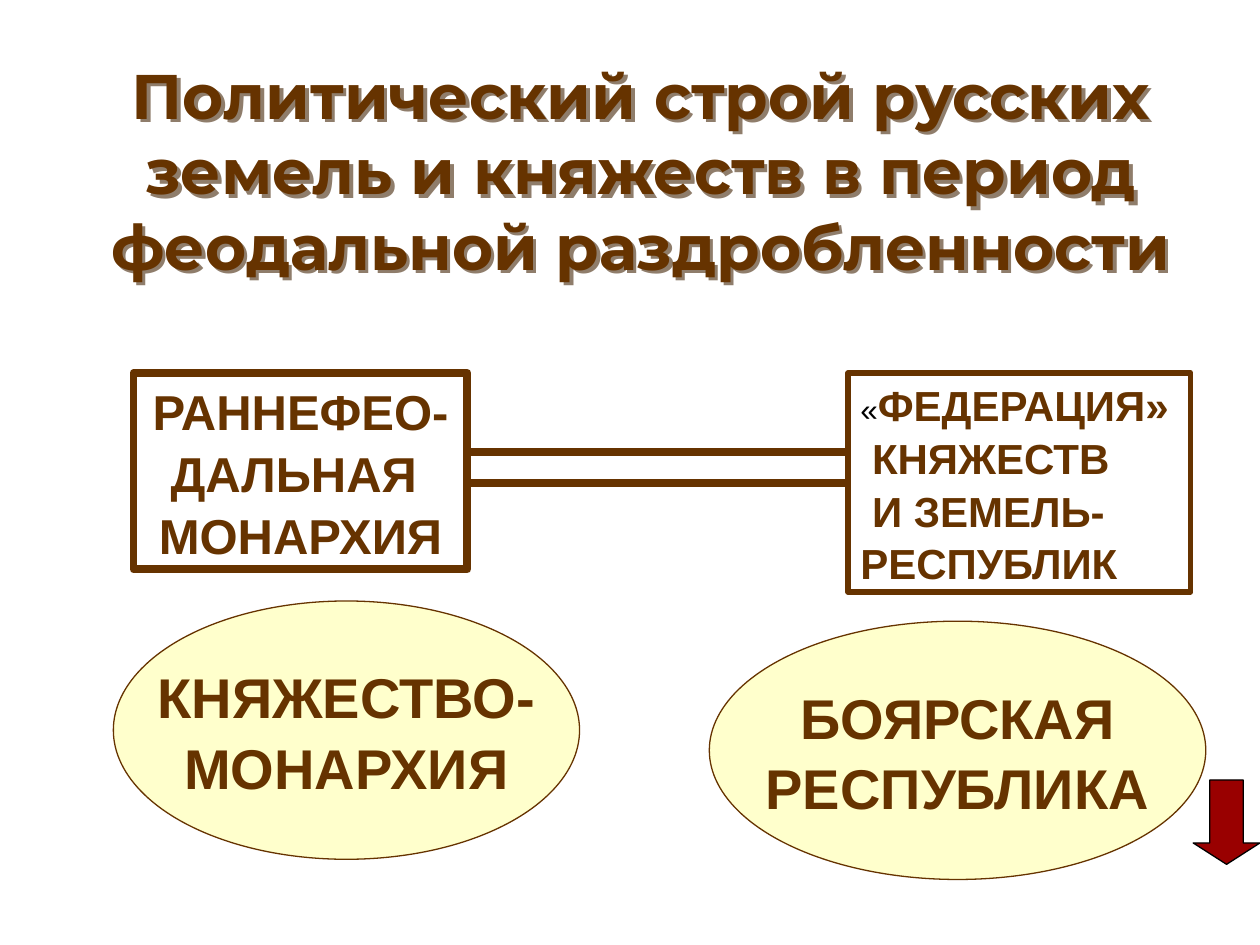
from lxml.etree import SubElement
from pptx import Presentation
from pptx.dml.color import RGBColor
from pptx.enum.shapes import MSO_CONNECTOR, MSO_SHAPE
from pptx.enum.text import MSO_ANCHOR, MSO_AUTO_SIZE, PP_ALIGN
from pptx.oxml.ns import qn
from pptx.util import Inches, Pt

BROWN, CREAM, RED, BLACK = "663300", "FFFFCC", "990000", "000000"
TITLE_SHADOW = "8F7D6B"


def color(value):
    """Turn a hex string into a colour."""
    return RGBColor.from_string(value)


def place(shape, box):
    """Move a shape to a box of left, top, width and height in inches."""
    shape.left, shape.top, shape.width, shape.height = map(Inches, box)


def add_span(para, text, size, font="Arial", fill=BROWN, bold=True):
    """Add one formatted run to a paragraph."""
    span = para.add_run()
    span.text = text
    span.font.name, span.font.size, span.font.bold = font, Pt(size), bold
    span.font.color.rgb = color(fill)


def add_title(page, box, text):
    """Place the title with its soft text shadow."""
    title = page.shapes.title
    place(title, box)
    frame = title.text_frame
    frame.word_wrap = True
    frame.auto_size = MSO_AUTO_SIZE.NONE
    frame.vertical_anchor = MSO_ANCHOR.MIDDLE
    para = frame.paragraphs[0]
    para.alignment = PP_ALIGN.CENTER
    add_span(para, text, 36, "Montserrat")
    effects = SubElement(title._element.spPr, qn("a:effectLst"))
    shadow = SubElement(effects, qn("a:outerShdw"), dist=str(Inches(0.04)),
                        dir="2700000", algn="ctr", rotWithShape="0")
    SubElement(shadow, qn("a:srgbClr"), val=TITLE_SHADOW)


def add_figure(page, kind, box, line_width, fill=None, line=BROWN):
    """Add a preset shape with its fill and outline."""
    shape = page.shapes.add_shape(kind, *map(Inches, box))
    shape.shadow.inherit = False
    if fill:
        shape.fill.solid()
        shape.fill.fore_color.rgb = color(fill)
    else:
        shape.fill.background()
    shape.line.color.rgb = color(line)
    shape.line.width = Pt(line_width)
    return shape


def write_lines(shape, lines, size, align=PP_ALIGN.CENTER, wrap=True):
    """Write each line as a paragraph, turning line feeds into breaks."""
    frame = shape.text_frame
    frame.word_wrap = wrap
    frame.vertical_anchor = MSO_ANCHOR.MIDDLE
    for index, line in enumerate(lines):
        para = frame.add_paragraph() if index else frame.paragraphs[0]
        para.alignment = align
        para.line_spacing = 1.05
        for part, text in enumerate(line.split("\n")):
            if part:
                para.add_line_break()
            if text.startswith("«"):
                add_span(para, "«", 18, fill=BLACK, bold=False)
                text = text[1:]
            add_span(para, text, size)


def add_link(page, left, right, top):
    """Draw a thick horizontal line between the two boxes."""
    link = page.shapes.add_connector(
        MSO_CONNECTOR.STRAIGHT, Inches(left), Inches(top), Inches(right), Inches(top))
    link.line.color.rgb = color(BROWN)
    link.line.width = Pt(4.5)
    SubElement(link._element.spPr, qn("a:effectLst"))


def add_state_forms(page):
    """Place the two linked boxes for the forms of state."""
    monarchy = add_figure(page, MSO_SHAPE.RECTANGLE, (1.06, 2.96, 2.65, 1.56), 4.5)
    write_lines(monarchy, ["РАННЕФЕО-", "ДАЛЬНАЯ \nМОНАРХИЯ"], 28)
    federation = add_figure(page, MSO_SHAPE.RECTANGLE, (6.73, 2.96, 2.72, 1.74), 3)
    write_lines(federation, ["«ФЕДЕРАЦИЯ»", " КНЯЖЕСТВ", " И ЗЕМЕЛЬ-", "РЕСПУБЛИК"],
                24, PP_ALIGN.LEFT)
    for top in (3.59, 3.83):
        add_link(page, 3.74, 6.73, top)


def add_government(page, box, lines):
    """Place an ellipse naming a type of government."""
    ellipse = add_figure(page, MSO_SHAPE.OVAL, box, 0.75, CREAM)
    write_lines(ellipse, lines, 32, wrap=False)


def add_down_arrow(page, box):
    """Place the red arrow that points onward."""
    arrow = add_figure(page, MSO_SHAPE.DOWN_ARROW, box, 0.75, RED, BLACK)
    arrow.adjustments[0], arrow.adjustments[1] = 0.5, 0.32


def main():
    """Build the slide and save the deck."""
    deck = Presentation()
    deck.slide_width, deck.slide_height = Inches(10), Inches(7.5)
    page = deck.slides.add_slide(deck.slide_layouts[5])
    add_title(page, (0.75, 0.21, 8.67, 2.27),
              "Политический строй русских земель и княжеств "
              "в период феодальной раздробленности")
    add_state_forms(page)
    add_government(page, (0.9, 4.77, 3.7, 2.05), ["КНЯЖЕСТВО-", "МОНАРХИЯ"])
    add_government(page, (5.63, 4.93, 3.94, 2.05), ["БОЯРСКАЯ", "РЕСПУБЛИКА"])
    add_down_arrow(page, (9.47, 6.19, 0.53, 0.67))
    deck.save("out.pptx")


if __name__ == "__main__":
    main()
